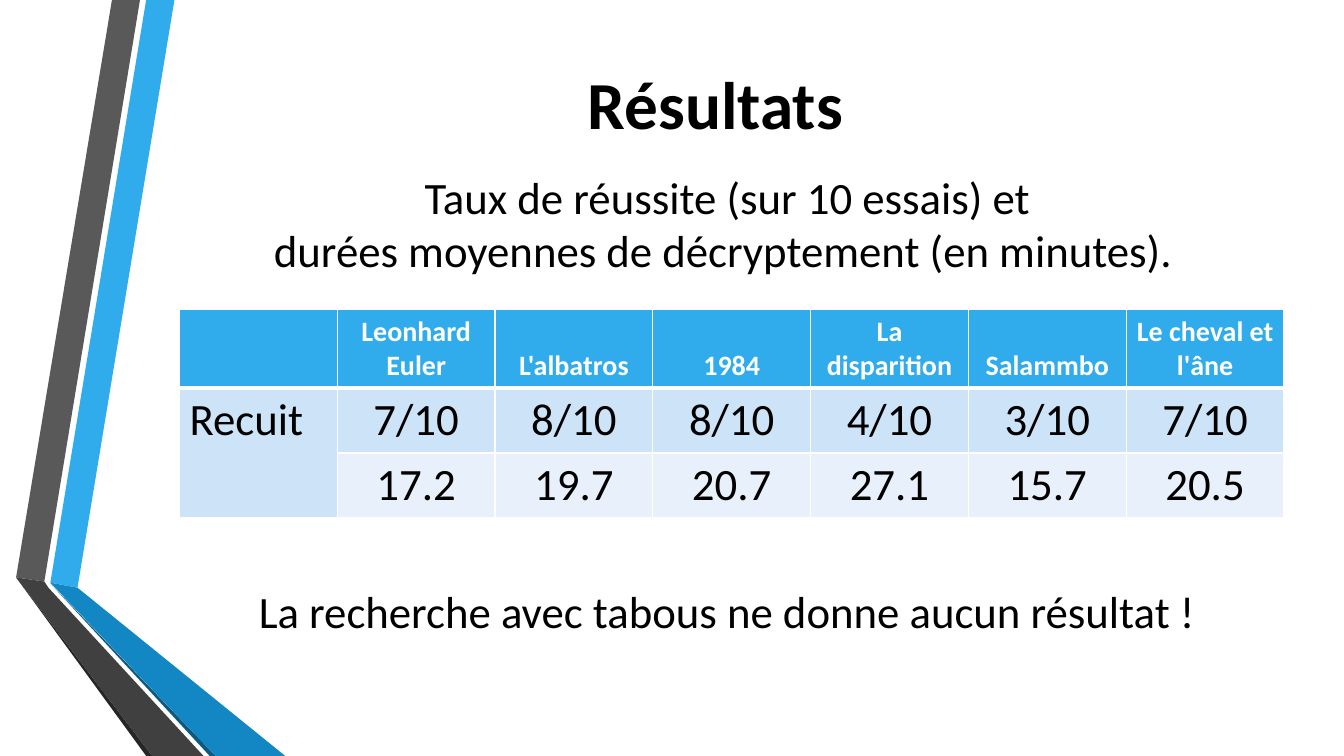
from lxml import etree
from pptx import Presentation
from pptx.dml.color import RGBColor
from pptx.enum.text import MSO_ANCHOR, PP_ALIGN
from pptx.oxml.ns import qn
from pptx.util import Pt

LEFT, CENTER = PP_ALIGN.LEFT, PP_ALIGN.CENTER
TOP, MIDDLE, BOTTOM = MSO_ANCHOR.TOP, MSO_ANCHOR.MIDDLE, MSO_ANCHOR.BOTTOM
FONT = "Calibri"
TITLE_ONLY = 5
BLACK, WHITE, BLUE = "000000", "FFFFFF", "30ACEC"
ROW_FILLS = [BLUE, "CDE3F8", "E8F1FB"]
ROW_HEIGHTS = [56, 46.4, 46.4]
COL_WIDTH = 112.73

RIBBON = [
    (BLUE, [(36, 416.2), (55.4, 419.8), (124.6, 0), (104.4, 0)]),
    ("595959", [(100, 0), (80, 0), (11.5, 412.5), (31.7, 415.4)]),
    ("262626", [(11.5, 412.5), (104.4, 540), (108.7, 540)]),
    ("0C5A82", [(36, 416.8), (149.8, 540), (154.1, 540)]),
    ("1287C3", [(36, 416.2), (154.1, 540), (203.8, 540), (55.4, 419.8)]),
    ("404040", [(145.4, 540), (34.6, 419.8), (31.7, 415.4), (11.5, 412.5), (108.7, 540)]),
]
ROWS = [
    ["", "Leonhard\nEuler", "L'albatros", "1984", "La disparition", "Salammbo", "Le cheval et l'âne"],
    ["Recuit", "7/10", "8/10", "8/10", "4/10", "3/10", "7/10"],
    ["", "17.2", "19.7", "20.7", "27.1", "15.7", "20.5"],
]


def rgb(value):
    """Turn a hex string into a colour."""
    return RGBColor.from_string(value)


def write(tf, lines, size, color=BLACK, bold=False):
    """Fill a text frame with (text, alignment) paragraphs."""
    tf.word_wrap = True
    for i, (text, align) in enumerate(lines):
        p = tf.add_paragraph() if i else tf.paragraphs[0]
        p.alignment = align
        r = p.add_run()
        r.text = text
        r.font.name, r.font.size, r.font.bold = FONT, Pt(size), bold
        r.font.color.rgb = rgb(color)


def place(sp, x, y, w, h):
    """Set the position and size of a shape."""
    sp.left, sp.top, sp.width, sp.height = Pt(x), Pt(y), Pt(w), Pt(h)


def add_title(s, text):
    """Place and format the title."""
    sp = s.shapes.title
    place(sp, 116.6, 37.4, 789.1, 72)
    sp.text_frame.vertical_anchor = MIDDLE
    write(sp.text_frame, [(text, CENTER)], 48, bold=True)


def add_text(s, x, y, w, h, lines):
    """Add a body text box."""
    sp = s.shapes.add_textbox(Pt(x), Pt(y), Pt(w), Pt(h))
    write(sp.text_frame, lines, 32)


def add_band(s, color, points):
    """Add one filled piece of the ribbon."""
    corners = [(Pt(x), Pt(y)) for x, y in points]
    builder = s.shapes.build_freeform(*corners[0], scale=1.0)
    builder.add_line_segments(corners[1:], close=True)
    sp = builder.convert_to_shape()
    sp.shadow.inherit = False
    sp.fill.solid()
    sp.fill.fore_color.rgb = rgb(color)
    sp.line.fill.background()


def set_borders(cell, widths):
    """Draw white cell borders of the given widths, ahead of the fill."""
    tc_pr = cell._tc.get_or_add_tcPr()
    for i, (side, width) in enumerate(widths.items()):
        ln = etree.Element(qn(f"a:{side}"), w=str(Pt(width)))
        fill = etree.SubElement(ln, qn("a:solidFill"))
        etree.SubElement(fill, qn("a:srgbClr"), val=WHITE)
        tc_pr.insert(i, ln)


def format_cell(cell, row, col, text):
    """Fill, border and write one table cell."""
    header = row == 0
    cell.fill.solid()
    cell.fill.fore_color.rgb = rgb(ROW_FILLS[row])
    set_borders(cell, {"lnL": 1, "lnR": 1, "lnT": 3 if row == 1 else 1, "lnB": 3 if header else 1})
    cell.vertical_anchor = BOTTOM if header else TOP
    if text:
        align = CENTER if col else LEFT
        lines = [(line, align) for line in text.split("\n")]
        write(cell.text_frame, lines, 20 if header else 32, WHITE if header else BLACK, header)


def add_results(s, x, y):
    """Add the table of success rates and durations."""
    n_rows, n_cols = len(ROWS), len(ROWS[0])
    frame = s.shapes.add_table(n_rows, n_cols, Pt(x), Pt(y), Pt(COL_WIDTH * n_cols), Pt(sum(ROW_HEIGHTS)))
    table = frame.table
    for column in table.columns:
        column.width = Pt(COL_WIDTH)
    for i, height in enumerate(ROW_HEIGHTS):
        table.rows[i].height = Pt(height)
        for j, text in enumerate(ROWS[i]):
            format_cell(table.cell(i, j), i, j, text)
    table.cell(1, 0).merge(table.cell(2, 0))


def main():
    """Build the results slide."""
    prs = Presentation()
    prs.slide_width, prs.slide_height = Pt(960), Pt(540)
    s = prs.slides.add_slide(prs.slide_layouts[TITLE_ONLY])
    for color, points in RIBBON:
        add_band(s, color, points)
    add_title(s, "Résultats")
    add_results(s, 128.2, 221)
    add_text(s, 188.6, 117.4, 669.6, 85, [
        ("Taux de réussite (sur 10 essais) et ", CENTER),
        ("durées moyennes de décryptement (en minutes).", LEFT),
    ])
    add_text(s, 177.8, 413.3, 729.4, 46, [("La recherche avec tabous ne donne aucun résultat !", LEFT)])
    prs.save("out.pptx")


if __name__ == "__main__":
    main()
